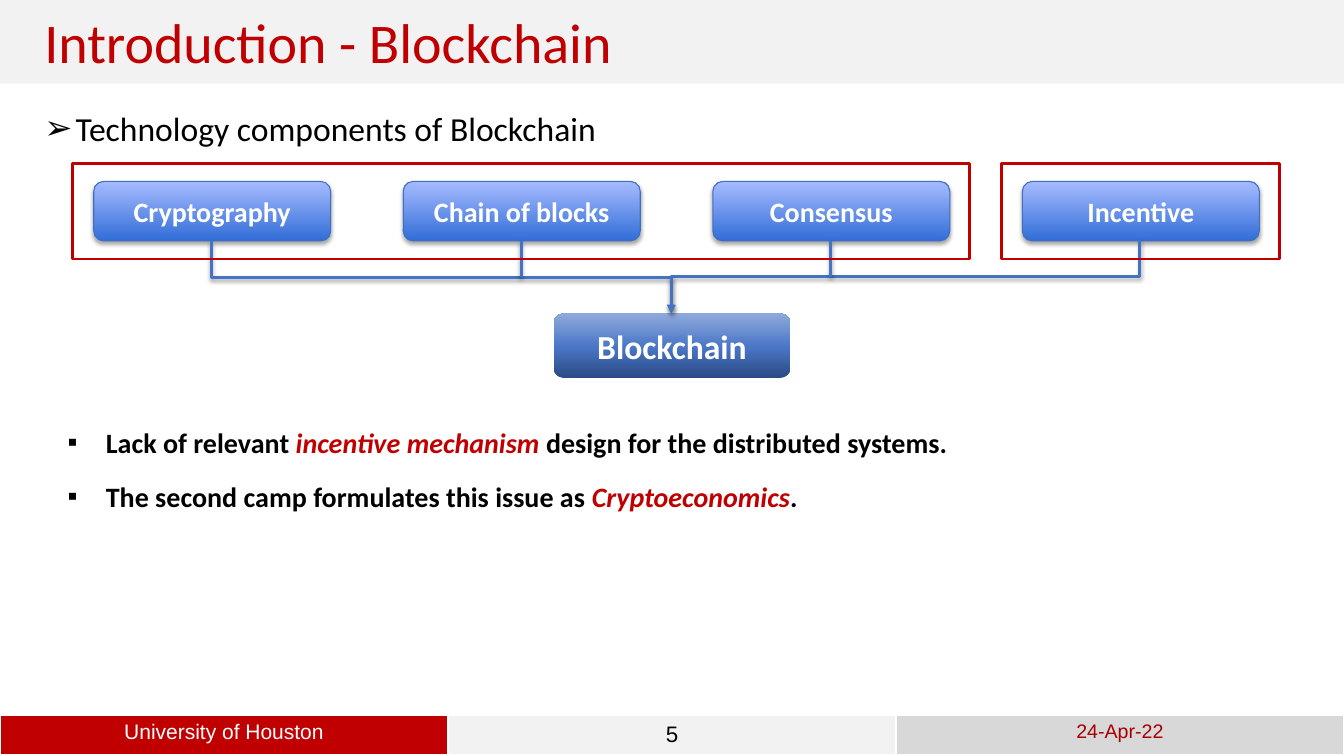
from lxml import etree
from pptx import Presentation
from pptx import util as u
from pptx.dml.color import RGBColor
from pptx.enum import shapes, text
from pptx.oxml.ns import qn

PX = 9144  # EMU in one px, 100 px to the inch
COLORS = {
    "red": "C00000", "date": "A80000", "white": "FFFFFF", "black": "000000",
    "band": "F2F2F2", "grey": "D8D8D8", "edge": "3F6FC3", "link": "4472C4",
}
NODE_STOPS = [(0, "316DD7"), (100, "A6BBFF")]
HUB_STOPS = [(0, "2A4B86"), (48, "4A76C6"), (100, "8FAADC")]
NODES = ["Cryptography", "Chain of blocks", "Consensus", "Incentive"]
NODE_X, NODE_Y, NODE_W, NODE_H, NODE_STEP = 93, 180, 235, 59, 307
HUB_X, HUB_Y, HUB_H = 549, 311, 64
BUS_Y = 275
BULLETS = [
    [("Lack of relevant ", False), ("incentive mechanism ", True),
     ("design for the distributed systems.", False)],
    [("The second camp formulates this issue as ", False),
     ("Cryptoeconomics", True), (".", False)],
]


def px(*lengths):
    return [u.Emu(n * PX) for n in lengths]


def rgb(name):
    return RGBColor.from_string(COLORS[name])


def sub(parent, tag, **attrs):
    return etree.SubElement(parent, qn(tag), {k: str(v) for k, v in attrs.items()})


def style(p, size, color, name="Calibri", bold=False, align=None):
    p.alignment = align
    p.font.size, p.font.name, p.font.bold = u.Pt(size), name, bold
    p.font.color.rgb = rgb(color)


def add_bullet(p, char, indent):
    pPr = p._p.get_or_add_pPr()
    pPr.set("marL", str(indent * PX))
    pPr.set("indent", str(-indent * PX))
    sub(sub(pPr, "a:buClr"), "a:srgbClr", val=COLORS["black"])
    sub(pPr, "a:buChar", char=char)


def place(sp, *box):
    sp.left, sp.top, sp.width, sp.height = px(*box)
    tf = sp.text_frame
    tf.auto_size = text.MSO_AUTO_SIZE.NONE
    tf.vertical_anchor = text.MSO_ANCHOR.TOP
    return tf


def add_shadow(effects, alpha, dist):
    shadow = sub(effects, "a:outerShdw", blurRad=u.Pt(3.1), dist=u.Pt(dist),
                 dir=5400000, rotWithShape=0)
    sub(sub(shadow, "a:srgbClr", val=COLORS["black"]), "a:alpha", val=alpha * 1000)


def add_box(slide, kind, *box):
    sp = slide.shapes.add_shape(kind, *px(*box))
    sp.shadow.inherit = False
    sp.fill.background()
    sp.line.fill.background()
    return sp


def add_node(slide, label, size, stops, *box):
    """Add a labelled rounded box whose gradient runs from bottom to top."""
    sp = add_box(slide, shapes.MSO_SHAPE.ROUNDED_RECTANGLE, *box)
    sp.fill.gradient()
    sp.fill.gradient_angle = 90
    stop_list = sp._element.spPr.find(".//" + qn("a:gsLst"))
    for old in list(stop_list):
        stop_list.remove(old)
    for pos, color in stops:
        sub(sub(stop_list, "a:gs", pos=pos * 1000), "a:srgbClr", val=color)
    tf = sp.text_frame
    tf.vertical_anchor = text.MSO_ANCHOR.MIDDLE
    tf.text = label
    style(tf.paragraphs[0], size, "white", bold=True, align=text.PP_ALIGN.CENTER)
    return sp


def add_component(slide, label, x):
    sp = add_node(slide, label, 20, NODE_STOPS, x, NODE_Y, NODE_W, NODE_H)
    sp.line.color.rgb = rgb("edge")
    sp.line.width = u.Pt(0.75)
    add_shadow(sp._element.spPr.find(qn("a:effectLst")), 35, 1.8)


def add_link(slide, kind, *ends):
    line = slide.shapes.add_connector(kind, *px(*ends))
    line.line.color.rgb = rgb("link")
    line.line.width = u.Pt(2)
    add_shadow(sub(line._element.spPr, "a:effectLst"), 38, 1.6)
    return line


def add_elbow_arrow(slide, x1, y1, x2, y2):
    """Add an arrow that goes down, across and down: a turned elbow."""
    length, span = y2 - y1, abs(x2 - x1)
    left, top = (x1 + x2 - length) // 2, (y1 + y2 - span) // 2
    start, end, turn = left, left + length, 90
    if x1 < x2:
        start, end, turn = end, start, 270
    line = add_link(slide, shapes.MSO_CONNECTOR.ELBOW, start, top, end, top + span)
    line._element.spPr.find(qn("a:xfrm")).set("rot", str(turn * 60000))
    sub(line.line._get_or_add_ln(), "a:tailEnd", type="triangle")


def add_frame(slide, *box):
    sp = add_box(slide, shapes.MSO_SHAPE.RECTANGLE, *box)
    sp.line.color.rgb = rgb("red")
    sp.line.width = u.Pt(2)


def add_title_band(slide):
    band = add_box(slide, shapes.MSO_SHAPE.RECTANGLE, 0, 0, 1333, 83)
    band.fill.solid()
    band.fill.fore_color.rgb = rgb("band")
    slide.shapes._spTree.insert(2, band._element)  # behind the title


def add_footer(slide):
    table = slide.shapes.add_table(1, 3, *px(0, 710, 1333, 40)).table
    cells = [("University of Houston", 15, "white", "red"),
             ("", 16, "black", "band"),
             ("24-Apr-22", 14, "date", "grey")]
    for cell, (label, size, color, fill) in zip(table.iter_cells(), cells):
        cell.text = label
        style(cell.text_frame.paragraphs[0], size, color, "Arial",
              align=text.PP_ALIGN.CENTER)
        tcPr = cell._tc.get_or_add_tcPr()
        for side, width in (("L", 1), ("R", 1), ("T", 1), ("B", 3)):
            border = sub(tcPr, "a:ln" + side, w=u.Pt(width))
            sub(sub(border, "a:solidFill"), "a:srgbClr", val=COLORS["white"])
        cell.fill.solid()
        cell.fill.fore_color.rgb = rgb(fill)
    number = slide.shapes.add_textbox(*px(600, 710, 133, 24)).text_frame
    number.word_wrap = True
    number.text = "5"
    style(number.paragraphs[0], 16, "black", "Arial", align=text.PP_ALIGN.CENTER)


def fill_text(slide):
    title, heading, points = slide.placeholders
    tf = place(title, 34, 2, 597, 77)
    tf.text = "Introduction - Blockchain"
    style(tf.paragraphs[0], 40, "red", align=text.PP_ALIGN.LEFT)

    tf = place(heading, 34, 102, 668, 50)
    tf.text = "Technology components of Blockchain"
    p = tf.paragraphs[0]
    add_bullet(p, "➢", 31)
    p.space_before = u.Pt(0)
    style(p, 24, "black")

    tf = place(points, 57, 417, 1265, 98)
    for i, runs in enumerate(BULLETS):
        p = tf.add_paragraph() if i else tf.paragraphs[0]
        add_bullet(p, "▪", 38)
        p.space_before = u.Pt(14.5 if i else 0)
        style(p, 20, "black", bold=True)
        for words, stressed in runs:
            r = p.add_run()
            r.text = words
            if stressed:
                r.font.italic = True
                r.font.color.rgb = rgb("red")


def add_diagram(slide):
    lefts = [NODE_X + i * NODE_STEP for i in range(len(NODES))]
    for label, x in zip(NODES, lefts):
        add_component(slide, label, x)
    add_node(slide, "Blockchain", 24, HUB_STOPS, HUB_X, HUB_Y, NODE_W, HUB_H)
    bottom, hub = NODE_Y + NODE_H, HUB_X + NODE_W // 2
    first, *inner, last = [x + NODE_W // 2 for x in lefts]
    for x in (last, first):
        add_elbow_arrow(slide, x, bottom, hub, HUB_Y)
    for x in inner:
        add_link(slide, shapes.MSO_CONNECTOR.STRAIGHT, x, bottom, x, BUS_Y)
    add_frame(slide, 993, 162, 276, 95)
    add_frame(slide, 72, 162, 890, 95)


def main():
    prs = Presentation()
    prs.slide_width, prs.slide_height = px(1333, 750)
    slide = prs.slides.add_slide(prs.slide_layouts.get_by_name("Two Content"))
    fill_text(slide)
    add_title_band(slide)
    add_footer(slide)
    add_diagram(slide)
    prs.save("out.pptx")


if __name__ == "__main__":
    main()
